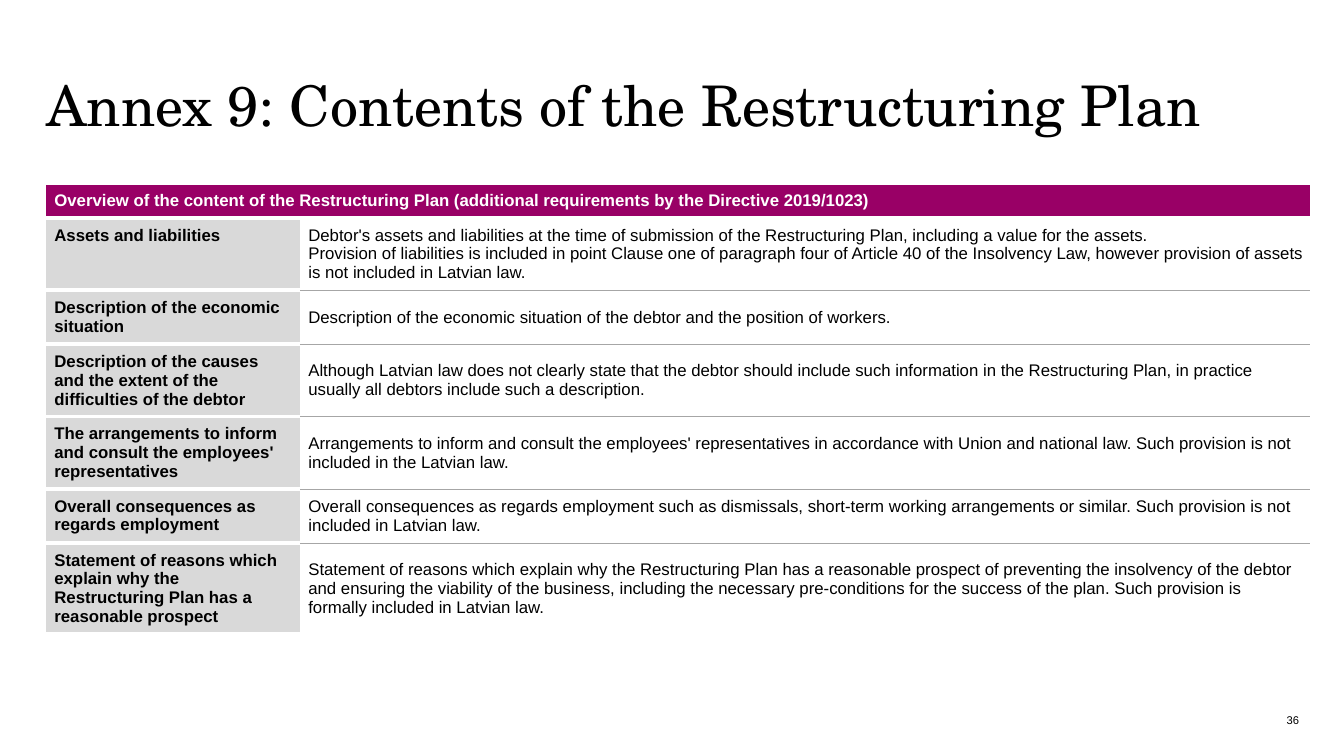
from lxml.etree import SubElement
from pptx import Presentation
from pptx.dml.color import RGBColor
from pptx.enum.text import MSO_ANCHOR, PP_ALIGN
from pptx.oxml.ns import qn
from pptx.util import Cm, Pt

COLORS = {"black": "000000", "white": "FFFFFF", "plum": "990066", "label": "D9D9D9", "rule": "A6A6A6"}
HEADING = "Overview of the content of the Restructuring Plan (additional requirements by the Directive 2019/1023)"
REQUIREMENTS = [
    ("Assets and liabilities",
     "Debtor's assets and liabilities at the time of submission of the Restructuring Plan, including a value for the assets.\n"
     "Provision of liabilities is included in point Clause one of paragraph four of Article 40 of the Insolvency Law, "
     "however provision of assets is not included in Latvian law.", 1.82),
    ("Description of the economic situation",
     "Description of the economic situation of the debtor and the position of workers.", 1.36),
    ("Description of the causes and the extent of the difficulties of the debtor",
     "Although Latvian law does not clearly state that the debtor should include such information in the "
     "Restructuring Plan, in practice usually all debtors include such a description.", 1.82),
    ("The arrangements to inform and consult the employees' representatives",
     "Arrangements to inform and consult the employees' representatives in accordance with Union and national law. "
     "Such provision is not included in the Latvian law.", 1.82),
    ("Overall consequences as regards employment",
     "Overall consequences as regards employment such as dismissals, short-term working arrangements or similar. "
     "Such provision is not included in Latvian law.", 1.36),
    ("Statement of reasons which explain why the Restructuring Plan has a reasonable prospect",
     "Statement of reasons which explain why the Restructuring Plan has a reasonable prospect of preventing the "
     "insolvency of the debtor and ensuring the viability of the business, including the necessary pre-conditions "
     "for the success of the plan. Such provision is formally included in Latvian law.", 2.28),
]


def style_text(frame, font_name, size, color, bold=False):
    for para in frame.paragraphs:
        for span in para.runs:
            span.font.name = font_name
            span.font.size = Pt(size)
            span.font.bold = bold
            span.font.color.rgb = RGBColor.from_string(COLORS[color])


def style_cell(cell, text, right_margin, anchor, color, bold, fill, borders):
    cell.text_frame.text = text
    style_text(cell.text_frame, "Arial", 12, color, bold)
    cell.vertical_anchor = anchor
    cell.margin_left = cell.margin_top = cell.margin_bottom = Cm(0.2)
    cell.margin_right = Cm(right_margin)
    properties = cell._tc.get_or_add_tcPr()
    for tag, border in zip(("a:lnT", "a:lnB"), borders):
        line = SubElement(properties, qn(tag), w=str(Pt(3 if border == "white" else 0.25)))
        SubElement(SubElement(line, qn("a:solidFill")), qn("a:srgbClr"), val=COLORS[border])
    if fill:
        cell.fill.solid()
        cell.fill.fore_color.rgb = RGBColor.from_string(COLORS[fill])
    else:
        cell.fill.background()


deck = Presentation()
deck.slide_width = Cm(33.87)
deck.slide_height = Cm(19.05)
page = deck.slides.add_slide(deck.slide_layouts[5])

title = page.shapes.title
title.left, title.top, title.width, title.height = Cm(1.17), Cm(0.91), Cm(31.57), Cm(3.66)
frame = title.text_frame
frame.text = "Annex 9: Contents of the Restructuring Plan"
frame.word_wrap = True
frame.vertical_anchor = MSO_ANCHOR.MIDDLE
frame.margin_left = frame.margin_right = frame.margin_top = frame.margin_bottom = 0
frame.paragraphs[0].alignment = PP_ALIGN.LEFT
frame.paragraphs[0].line_spacing = 0.9
style_text(frame, "TeX Gyre Schola", 40, "black")

heights = [0.88] + [height for label, description, height in REQUIREMENTS]
table_shape = page.shapes.add_table(len(heights), 2, Cm(1.17), Cm(4.61), Cm(31.85), Cm(sum(heights)))
table = table_shape.table
table.first_row = False
table.horz_banding = False
table._tbl.tblPr.find(qn("a:tableStyleId")).text = "{2D5ABB26-0587-4C30-8999-92F81FD0307C}"
table.columns[0].width = Cm(6.4)
table.columns[1].width = Cm(25.45)
for row, height in zip(table.rows, heights):
    row.height = Cm(height)

table.cell(0, 0).merge(table.cell(0, 1))
for column, text in enumerate((HEADING, "")):
    style_cell(table.cell(0, column), text, 0.2, MSO_ANCHOR.MIDDLE, "white", True, "plum", ("white", "white"))

for index, (label, description, height) in enumerate(REQUIREMENTS, start=1):
    top = "white" if index == 1 else "rule"
    bottom = "white" if index == len(REQUIREMENTS) else "rule"
    style_cell(table.cell(index, 0), label, 0.5, MSO_ANCHOR.TOP, "black", True, "label", ("white", "white"))
    style_cell(table.cell(index, 1), description, 0.1, MSO_ANCHOR.MIDDLE, "black", False, None, (top, bottom))

number_box = page.shapes.add_textbox(Cm(25.12), Cm(17.98), Cm(7.62), Cm(0.33))
frame = number_box.text_frame
frame.text = "36"
frame.word_wrap = True
frame.vertical_anchor = MSO_ANCHOR.MIDDLE
frame.margin_left = frame.margin_right = frame.margin_top = frame.margin_bottom = 0
frame.paragraphs[0].alignment = PP_ALIGN.RIGHT
style_text(frame, "Arial", 8, "black")

deck.save("out.pptx")
